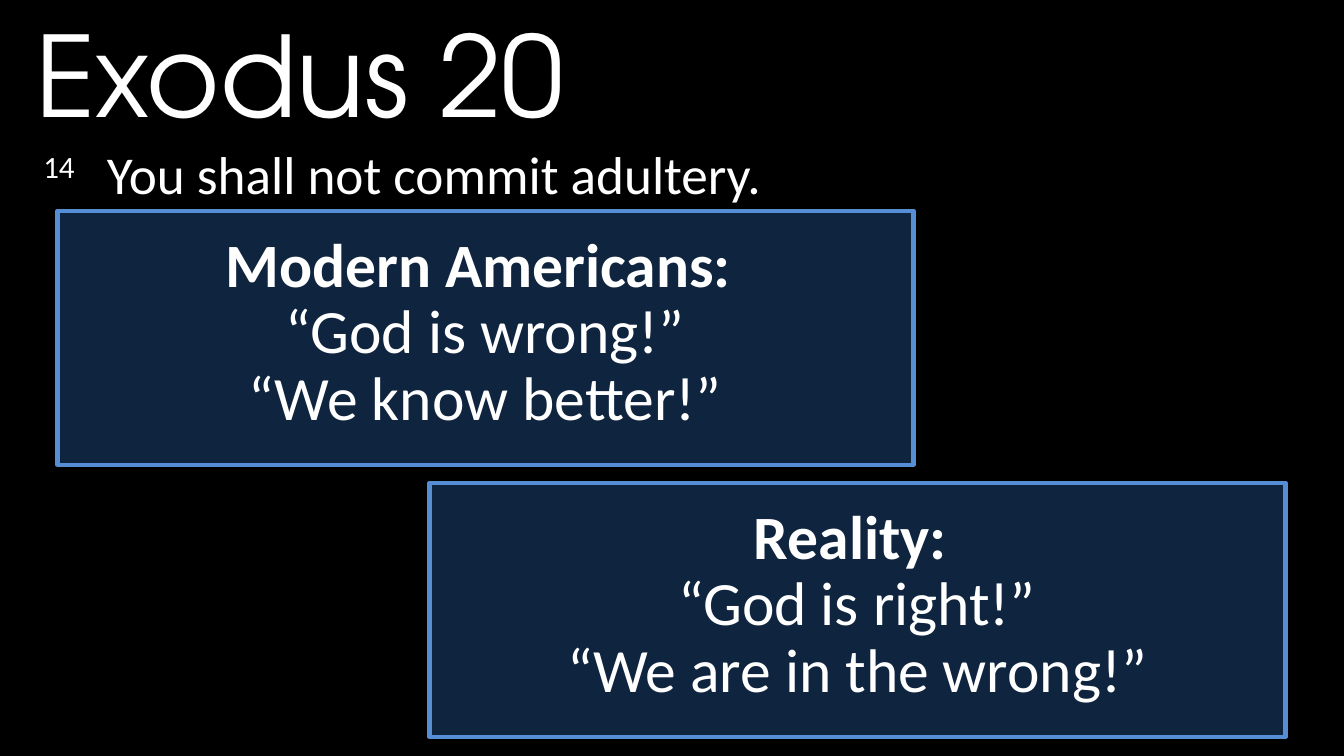
from pptx import Presentation
from pptx import util as u
from pptx.dml.color import RGBColor
from pptx.enum import shapes, text
from pptx.oxml.ns import qn

COLORS = {"background": "000000", "text": "FFFFFF", "panel": "0F243E", "border": "558ED5"}
TITLE_FONT = "TeX Gyre Adventor"
BODY_FONT = "Calibri"


class VerseSlide:
    def __init__(self, presentation):
        self.slide = presentation.slides.add_slide(presentation.slide_layouts[1])
        self.paint(self.slide.background.fill, "background")

    def paint(self, fill, color):
        fill.solid()
        fill.fore_color.rgb = RGBColor.from_string(COLORS[color])

    def place(self, shape, left, top, width, height):
        shape.left, shape.top = u.Inches(left), u.Inches(top)
        shape.width, shape.height = u.Inches(width), u.Inches(height)
        shape.text_frame.word_wrap = True
        shape.text_frame.auto_size = text.MSO_AUTO_SIZE.NONE
        shape.text_frame.vertical_anchor = text.MSO_ANCHOR.TOP

    def style(self, paragraph, size, font=BODY_FONT, align=text.PP_ALIGN.LEFT, spacing=0.9, bold=False):
        paragraph.alignment = align
        paragraph.line_spacing = spacing
        paragraph.space_before = u.Pt(0)
        paragraph.font.name = font
        paragraph.font.size = u.Pt(size)
        paragraph.font.bold = bold
        paragraph.font.color.rgb = RGBColor.from_string(COLORS["text"])

    def title(self, wording):
        shape = self.slide.shapes.title
        self.place(shape, 0.25, 0, 12, 1.45)
        shape.text_frame.text = wording
        self.style(shape.text_frame.paragraphs[0], 80, TITLE_FONT, spacing=1.0)

    def verse(self, number, wording):
        shape = self.slide.placeholders[1]
        self.place(shape, 0.33, 1.42, 12.62, 0.68)
        paragraph = shape.text_frame.paragraphs[0]
        self.style(paragraph, 38)
        number_run = paragraph.add_run()
        number_run.text = number + "\t"
        number_run.font._element.set("baseline", "30000")
        paragraph.add_run().text = wording
        properties = paragraph._p.get_or_add_pPr()
        properties.set("marL", str(u.Inches(0.63)))
        properties.set("indent", str(u.Inches(-0.63)))
        properties.append(properties.makeelement(qn("a:buNone"), {}))

    def panel(self, left, top, lines):
        shape = self.slide.shapes.add_shape(shapes.MSO_SHAPE.RECTANGLE, 0, 0, 0, 0)
        self.place(shape, left, top, 8.49, 2.52)
        shape.shadow.inherit = False
        self.paint(shape.fill, "panel")
        self.paint(shape.line.fill, "border")
        shape.line.width = u.Pt(3)
        frame = shape.text_frame
        frame.margin_top = u.Inches(0.23)
        frame.text = "\n".join(lines)
        for index, paragraph in enumerate(frame.paragraphs):
            self.style(paragraph, 44, align=text.PP_ALIGN.CENTER, bold=index == 0)


def main():
    presentation = Presentation()
    presentation.slide_width = u.Inches(13.33)
    presentation.slide_height = u.Inches(7.5)
    slide = VerseSlide(presentation)
    slide.title("Exodus 20")
    slide.verse("14\u00a0", "You shall not commit adultery.")
    slide.panel(0.57, 2.09, ["Modern Americans: ", "“God is wrong!”", "“We know better!”"])
    slide.panel(4.26, 4.79, ["Reality: ", "“God is right!”", "“We are in the wrong!”"])
    presentation.save("out.pptx")


if __name__ == "__main__":
    main()
